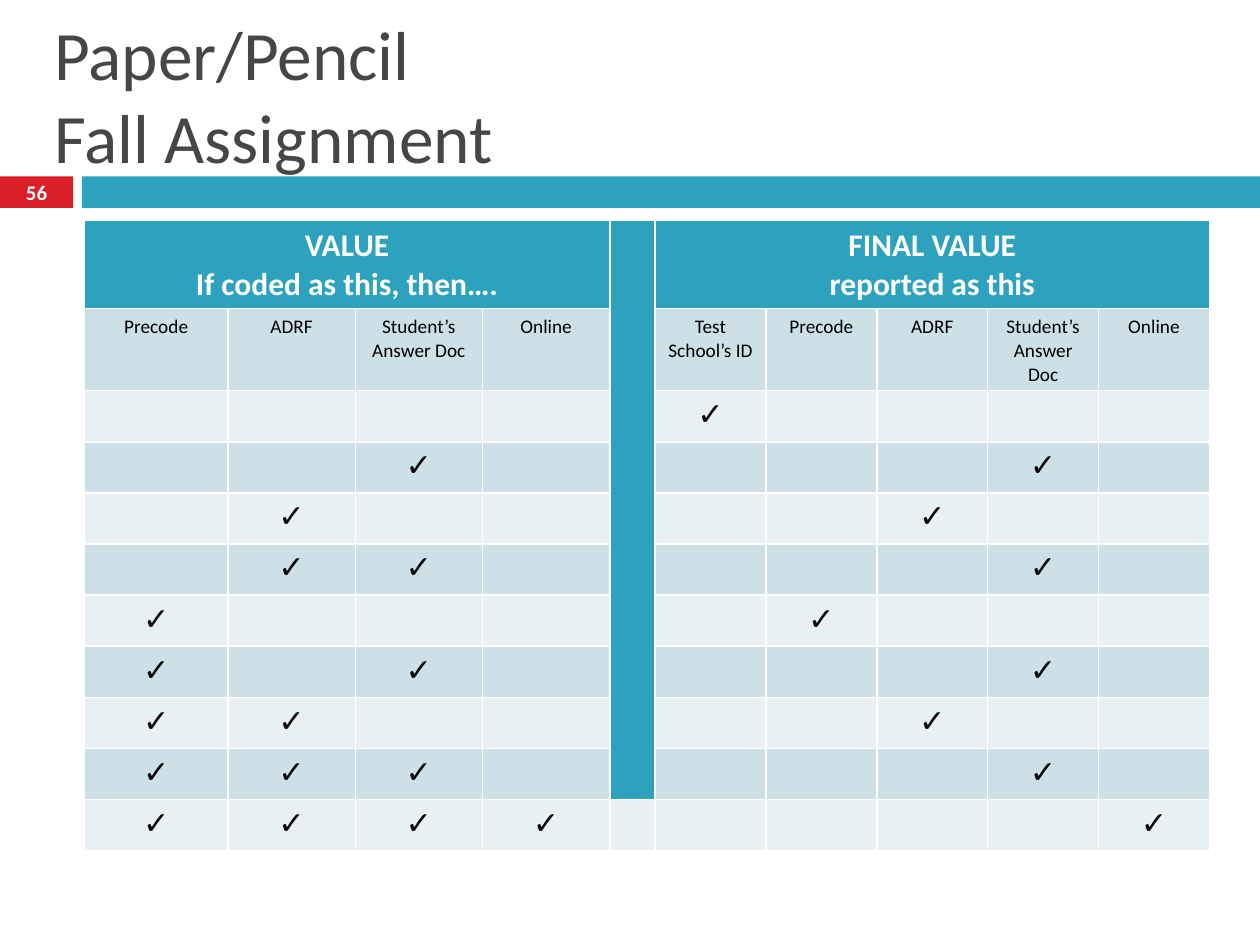
"""Build the Paper/Pencil Fall Assignment slide."""
from dataclasses import dataclass

import pptx
import pptx.dml.color
import pptx.enum.shapes
import pptx.enum.text
import pptx.util

Inches = pptx.util.Inches
ALIGN = pptx.enum.text.PP_ALIGN
MIDDLE = pptx.enum.text.MSO_ANCHOR.MIDDLE

COLORS = {
    "red": "DA1F28",
    "teal": "2DA2BF",
    "title": "464646",
    "white": "FFFFFF",
    "black": "000000",
    "check": "0C0607",
    "dark_band": "CDE0E8",
    "light_band": "E8F0F4",
}


@dataclass(frozen=True)
class TextStyle:
    size: float
    color: str
    bold: bool = False
    font: str = "Calibri"
    align: ALIGN = ALIGN.CENTER


@dataclass(frozen=True)
class Bar:
    left: float
    width: float
    color: str


@dataclass(frozen=True)
class Group:
    first: int
    last: int
    heading: str
    labels: tuple[str, ...]


TITLE = TextStyle(39.6, "title", align=ALIGN.LEFT)
NUMBER = TextStyle(11.9, "white", bold=True)
HEADING = TextStyle(18, "white", bold=True)
LABEL = TextStyle(11, "black")
CHECK = TextStyle(18, "check", bold=True, font="Arial")

BARS = (Bar(0, 0.58, "red"), Bar(0.65, 9.35, "teal"))
SOURCES = ("Precode", "ADRF", "Student’s Answer Doc", "Online")
GROUPS = (
    Group(0, 3, "VALUE\vIf coded as this, then….", SOURCES),
    Group(5, 9, "FINAL VALUE\nreported as this", ("Test School’s ID", *SOURCES)),
)
DIVIDER = 4
CHECKS = ((5,), (2, 8), (1, 7), (1, 2, 8), (0, 6), (0, 2, 8), (0, 1, 7), (0, 1, 2, 8), (0, 1, 2, 3, 9))
COLUMN_WIDTHS = (1.14, *[1.01] * 3, 0.36, *[0.88] * 5)
ROW_COUNT = len(CHECKS) + 2
ROW_HEIGHT = 3.65 / 9


def rgb(name: str) -> pptx.dml.color.RGBColor:
    """Return the named colour."""
    return pptx.dml.color.RGBColor.from_string(COLORS[name])


def write(tf: pptx.text.text.TextFrame, text: str, style: TextStyle) -> None:
    """Fill a text frame with text in one style."""
    tf.text = text
    for p in tf.paragraphs:
        p.alignment = style.align
        p.font.name = style.font
        p.font.size = pptx.util.Pt(style.size)
        p.font.bold = style.bold
        p.font.color.rgb = rgb(style.color)


def paint(cell: pptx.table._Cell, color: str) -> None:
    """Give a table cell a solid fill."""
    cell.fill.solid()
    cell.fill.fore_color.rgb = rgb(color)


def add_bar(s: pptx.slide.Slide, bar: Bar) -> None:
    """Draw one part of the band below the title."""
    sp = s.shapes.add_shape(
        pptx.enum.shapes.MSO_SHAPE.RECTANGLE,
        Inches(bar.left), Inches(1.4), Inches(bar.width), Inches(0.25),
    )
    sp.shadow.inherit = False
    sp.fill.solid()
    sp.fill.fore_color.rgb = rgb(bar.color)
    sp.line.fill.background()


def add_title(s: pptx.slide.Slide) -> None:
    """Place and format the title."""
    sp = s.shapes.title
    sp.left, sp.top, sp.width, sp.height = map(Inches, (0.33, 0.33, 9.33, 0.83))
    tf = sp.text_frame
    tf.auto_size = pptx.enum.text.MSO_AUTO_SIZE.NONE
    tf.vertical_anchor = MIDDLE
    write(tf, "Paper/Pencil\vFall Assignment", TITLE)


def add_number(s: pptx.slide.Slide) -> None:
    """Place the slide number on the red bar."""
    tf = s.shapes.add_textbox(0, Inches(1.39), Inches(0.58), Inches(0.27)).text_frame
    tf.word_wrap = True
    tf.margin_top = tf.margin_bottom = 0
    tf.vertical_anchor = MIDDLE
    write(tf, "56", NUMBER)


def add_assignment_table(s: pptx.slide.Slide) -> None:
    """Draw the table of coded and reported values."""
    frame = s.shapes.add_table(
        ROW_COUNT, len(COLUMN_WIDTHS), Inches(0.67), Inches(1.75), Inches(8.92), Inches(5)
    )
    table = frame.table
    for column, width in zip(table.columns, COLUMN_WIDTHS):
        column.width = Inches(width)
    for i, row in enumerate(table.rows):
        row.height = Inches(ROW_HEIGHT)
        band = "teal" if i == 0 else "dark_band" if i % 2 else "light_band"
        for cell in row.cells:
            paint(cell, band)
    frame.height = Inches(5)

    for group in GROUPS:
        heading = table.cell(0, group.first)
        heading.merge(table.cell(0, group.last))
        write(heading.text_frame, group.heading, HEADING)
        for i, label in enumerate(group.labels, group.first):
            write(table.cell(1, i).text_frame, label, LABEL)
    table.cell(0, DIVIDER).merge(table.cell(ROW_COUNT - 2, DIVIDER))

    for i, checked in enumerate(CHECKS, 2):
        for j in checked:
            write(table.cell(i, j).text_frame, "✓", CHECK)


def main() -> None:
    """Build and save the slide."""
    prs = pptx.Presentation()
    prs.slide_width, prs.slide_height = Inches(10), Inches(7.5)
    s = prs.slides.add_slide(prs.slide_layouts[5])
    for bar in BARS:
        add_bar(s, bar)
    add_title(s)
    add_number(s)
    add_assignment_table(s)
    prs.save("out.pptx")


if __name__ == "__main__":
    main()
